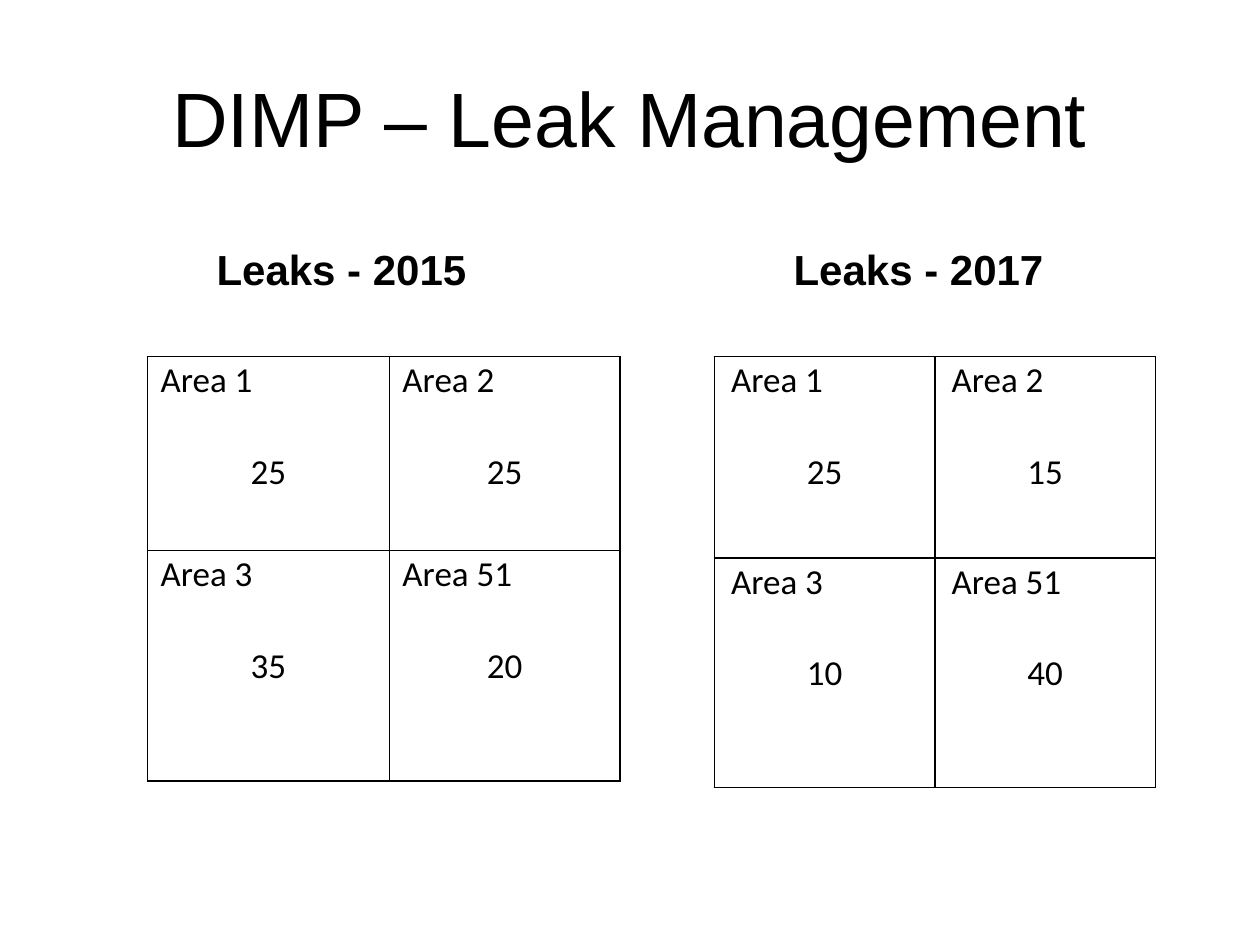
import pptx
import pptx.util
import pptx.dml.color
import pptx.enum.text
import pptx.oxml
import pptx.oxml.ns
from dataclasses import dataclass

Inches, Pt = pptx.util.Inches, pptx.util.Pt
ANCHOR, ALIGN = pptx.enum.text.MSO_ANCHOR, pptx.enum.text.PP_ALIGN


@dataclass(frozen=True)
class Theme:
    ink: str = "000000"
    heading_font: str = "Arial"
    table_font: str = "Calibri"
    title_size: int = 44
    heading_size: int = 24
    cell_size: int = 20
    border: int = 1
    line_spacing: float = 1.07
    number_gap: int = 26
    cell_margin: float = 0.07


THEME = Theme()
WIDTH, HEIGHT = 10, 7.5
MARGIN, GUTTER = 0.5, 0.16
HEADING_TOP, HEADING_HEIGHT = 1.68, 0.7
TABLE_TOP = 2.83

TITLE = "DIMP – Leak Management"
AREAS = [["Area 1", "Area 2"], ["Area 3", "Area 51"]]
YEARS = [
    {"heading": "Leaks - 2015", "leaks": [[25, 25], [35, 20]],
     "left": 1.17, "columns": [1.92, 1.83], "rows": [1.54, 1.83], "indent": 2.5},
    {"heading": "Leaks - 2017", "leaks": [[25, 15], [10, 40]],
     "left": 5.67, "columns": [1.75, 1.75], "rows": [1.6, 1.82], "indent": 4.5},
]


def style(paragraph, font, size, bold=False):
    for span in paragraph.runs:
        span.font.name = font
        span.font.size = Pt(size)
        span.font.bold = bold
        span.font.color.rgb = pptx.dml.color.RGBColor.from_string(THEME.ink)


def add_heading(page, text, area, size, anchor, bold=False):
    box = page.shapes.add_textbox(*map(Inches, area))
    frame = box.text_frame
    frame.word_wrap = True
    frame.vertical_anchor = anchor
    frame.text = text
    frame.paragraphs[0].alignment = ALIGN.CENTER
    style(frame.paragraphs[0], THEME.heading_font, size, bold)


def add_borders(cell):
    properties = cell._tc.get_or_add_tcPr()
    for position, side in enumerate(("lnL", "lnR", "lnT", "lnB")):
        properties.insert(position, pptx.oxml.parse_xml(
            f'<a:{side} {pptx.oxml.ns.nsdecls("a")} w="{Pt(THEME.border)}">'
            f'<a:solidFill><a:srgbClr val="{THEME.ink}"/></a:solidFill></a:{side}>'))


def fill_cell(cell, area, leaks, indent):
    cell.fill.background()
    add_borders(cell)
    cell.margin_left = cell.margin_right = Inches(THEME.cell_margin)
    cell.margin_top = cell.margin_bottom = 0
    cell.vertical_anchor = ANCHOR.TOP
    cell.text_frame.text = f"{area}\n{leaks}"
    label, number = cell.text_frame.paragraphs
    label._p.get_or_add_pPr().set("marL", str(Pt(indent)))
    number.alignment = ALIGN.CENTER
    number.space_before = Pt(THEME.number_gap)
    for paragraph in (label, number):
        paragraph.line_spacing = THEME.line_spacing
        style(paragraph, THEME.table_font, THEME.cell_size)


def add_leak_table(page, year):
    columns, rows = year["columns"], year["rows"]
    table = page.shapes.add_table(
        len(rows), len(columns), Inches(year["left"]), Inches(TABLE_TOP),
        Inches(sum(columns)), Inches(sum(rows))).table
    table.first_row = table.horz_banding = False
    for column, width in zip(table.columns, columns):
        column.width = Inches(width)
    for row, height, areas, leaks in zip(table.rows, rows, AREAS, year["leaks"]):
        row.height = Inches(height)
        for cell, area, count in zip(row.cells, areas, leaks):
            fill_cell(cell, area, count, year["indent"])


def main():
    deck = pptx.Presentation()
    deck.slide_width, deck.slide_height = Inches(WIDTH), Inches(HEIGHT)
    page = deck.slides.add_slide(deck.slide_layouts[6])
    add_heading(page, TITLE, (MARGIN, 0.3, WIDTH - 2 * MARGIN, 1.25),
                THEME.title_size, ANCHOR.MIDDLE)
    half = (WIDTH - 2 * MARGIN - GUTTER) / 2
    for index, year in enumerate(YEARS):
        left = MARGIN + index * (half + GUTTER)
        add_heading(page, year["heading"], (left, HEADING_TOP, half, HEADING_HEIGHT),
                    THEME.heading_size, ANCHOR.BOTTOM, bold=True)
        add_leak_table(page, year)
    deck.save("out.pptx")


if __name__ == "__main__":
    main()
